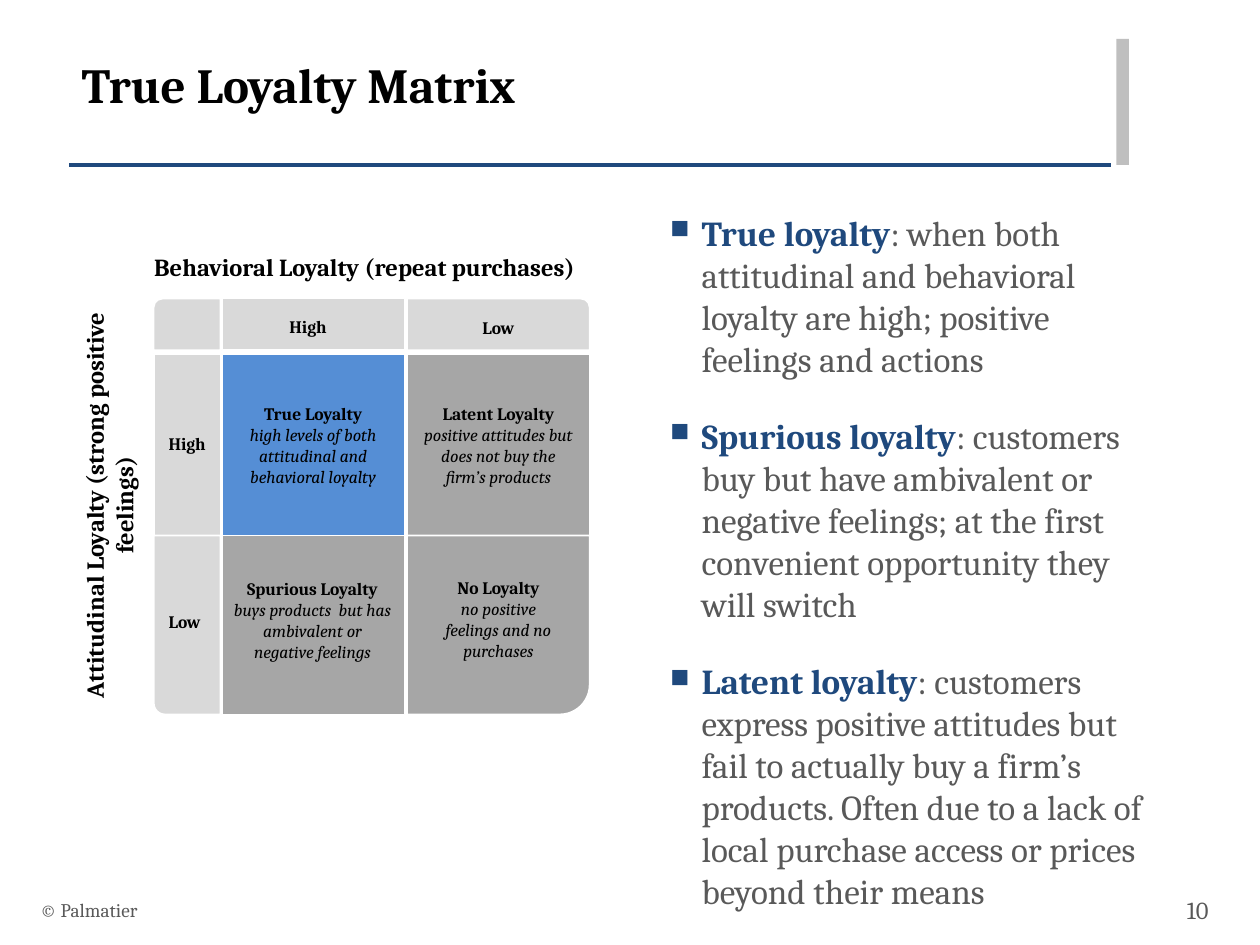
from lxml import etree
from pptx import Presentation
from pptx.dml.color import RGBColor
from pptx.enum.shapes import MSO_CONNECTOR, MSO_SHAPE
from pptx.enum.text import MSO_ANCHOR, PP_ALIGN
from pptx.oxml.ns import qn
from pptx.util import Inches, Pt

RECT, ROUND = MSO_SHAPE.RECTANGLE, MSO_SHAPE.ROUND_1_RECTANGLE
TOP, MIDDLE = MSO_ANCHOR.TOP, MSO_ANCHOR.MIDDLE
LEFT, CENTER, RIGHT = PP_ALIGN.LEFT, PP_ALIGN.CENTER, PP_ALIGN.RIGHT

FONT = "Cambria"
COLORS = {"navy": "1F497D", "blue": "558ED5", "gray": "A6A6A6", "light": "D9D9D9",
          "bar": "BFBFBF", "text": "595959", "black": "000000", "white": "FFFFFF"}

BULLETS = [
    ("True loyalty", ": when both attitudinal and behavioral loyalty are high; "
     "positive feelings and actions"),
    ("Spurious loyalty", ": customers buy but have ambivalent or negative feelings; "
     "at the first convenient opportunity they will switch"),
    ("Latent loyalty", ": customers express positive attitudes but fail to actually buy "
     "a firm’s products. Often due to a lack of local purchase access or prices "
     "beyond their means"),
]

COLS = [(1.22, 0.53), (1.76, 1.45), (3.23, 1.45)]
ROWS = [(2.37, 0.41), (2.81, 1.44), (4.25, 1.42)]
CELLS = [
    [("light", ROUND, 0, True), ("light", RECT, 0, False), ("light", ROUND, 0, False)],
    [("light", RECT, 0, False), ("blue", RECT, 0, False), ("gray", RECT, 0, False)],
    [("light", ROUND, 180, False), ("gray", RECT, 0, False), ("gray", ROUND, 180, True)],
]
QUADRANTS = [
    ((1.76, 2.81, 1.45, 1.44), "True Loyalty",
     "high levels of both attitudinal and behavioral loyalty"),
    ((3.23, 2.81, 1.45, 1.44), "Latent Loyalty",
     "positive attitudes but does not buy the firm’s products"),
    ((1.76, 4.55, 1.44, 0.76), "Spurious Loyalty",
     "buys products  but has ambivalent or negative feelings"),
    ((3.36, 4.54, 1.19, 0.76), "No Loyalty", "no positive feelings and no purchases"),
]
LEVELS = [((2.18, 2.41), "High"), ((3.69, 2.42), "Low"),
          ((1.22, 3.34), "High"), ((1.2, 4.75), "Low")]
LEVEL_SIZE = (0.53, 0.36)
AXES = [((1.05, 1.96, 3.69, 0.33), 0, "Behavioral Loyalty (repeat purchases)"),
        ((-1.01, 3.73, 3.76, 0.56), 270, "Attitudinal Loyalty (strong positive feelings)")]

HEAD = {"size": Pt(10), "bold": True}
DETAIL = {"size": Pt(10), "italic": True}


def inches(values):
    return [Inches(v) for v in values]


def rgb(name):
    return RGBColor.from_string(COLORS[name])


def add_block(s, at, fill, shape=RECT):
    sp = s.shapes.add_shape(shape, *inches(at))
    sp.shadow.inherit = False
    sp.fill.solid()
    sp.fill.fore_color.rgb = rgb(fill)
    sp.line.fill.background()
    return sp


def add_text(s, at, paragraphs, align=LEFT, anchor=TOP, inset=(0.1, 0.05)):
    sp = s.shapes.add_textbox(*inches(at))
    tf = sp.text_frame
    x, y = inches(inset)
    frame = {"word_wrap": True, "vertical_anchor": anchor, "margin_left": x,
             "margin_right": x, "margin_top": y, "margin_bottom": y}
    for name, value in frame.items():
        setattr(tf, name, value)
    for i, runs in enumerate(paragraphs):
        p = tf.add_paragraph() if i else tf.paragraphs[0]
        p.alignment = align
        for text, color, style in runs:
            r = p.add_run()
            r.text = text
            r.font.color.rgb = rgb(color)
            for name, value in {"name": FONT, **style}.items():
                setattr(r.font, name, value)
    return sp


def add_bullet(p):
    pPr = p._p.get_or_add_pPr()
    pPr.set("marL", str(Inches(0.25)))
    pPr.set("indent", str(-Inches(0.25)))
    color = etree.SubElement(pPr, qn("a:buClr"))
    etree.SubElement(color, qn("a:srgbClr"), val=COLORS["navy"])
    etree.SubElement(pPr, qn("a:buSzPct"), val="75000")
    etree.SubElement(pPr, qn("a:buChar"), char="■")


def add_frame(s):
    rule = s.shapes.add_connector(MSO_CONNECTOR.STRAIGHT, *inches((0.55, 1.31, 8.82, 1.31)))
    rule.line.color.rgb = rgb("navy")
    rule.line.width = Pt(2)
    etree.SubElement(rule._element.spPr, qn("a:effectLst"))
    add_block(s, (8.86, 0.31, 0.1, 1), "bar")
    add_text(s, (0.55, 0.38, 8.26, 0.88),
             [[("True Loyalty Matrix", "black", {"size": Pt(28), "bold": True})]])
    add_text(s, (0.22, 7.02, 6.7, 0.4),
             [[("© Palmatier", "text", {"size": Pt(11)})]], anchor=MIDDLE)
    add_text(s, (9.08, 7.02, 0.61, 0.4),
             [[("10", "text", {"size": Pt(14)})]], RIGHT, MIDDLE)


def add_definitions(s):
    paragraphs = [[(term, "navy", {"size": Pt(20), "bold": True}),
                   (meaning, "text", {"size": Pt(20)})] for term, meaning in BULLETS]
    sp = add_text(s, (5.22, 1.63, 3.97, 5.41), paragraphs)
    for i, p in enumerate(sp.text_frame.paragraphs):
        p.space_before = Pt(20 if i else 0)
        add_bullet(p)


def add_matrix(s):
    for (y, h), cells in zip(ROWS, CELLS):
        for (x, w), (fill, shape, turn, flip) in zip(COLS, cells):
            sp = add_block(s, (x, y, w, h), fill, shape)
            sp.line.color.rgb = rgb("white")
            sp.line.width = Pt(1)
            sp.rotation = turn
            if flip:
                sp._element.spPr.xfrm.set("flipH", "1")
    for at, name, detail in QUADRANTS:
        anchor, inset = (MIDDLE, (0.1, 0.05)) if at[1] < ROWS[2][0] else (TOP, (0.09, 0.04))
        add_text(s, at, [[(name, "black", HEAD)], [(detail, "black", DETAIL)]],
                 CENTER, anchor, inset)
    for at, level in LEVELS:
        sp = add_text(s, at + LEVEL_SIZE, [[(level, "black", HEAD)]], CENTER, MIDDLE)
        sp.text_frame.word_wrap = False
    for at, turn, label in AXES:
        sp = add_text(s, at, [[(label, "black", {"size": Pt(14), "bold": True})]],
                      CENTER, inset=(0.09, 0.04))
        sp.rotation = turn


def main():
    prs = Presentation()
    prs.slide_width, prs.slide_height = inches((10, 7.5))
    s = prs.slides.add_slide(prs.slide_layouts[6])
    add_frame(s)
    add_definitions(s)
    add_matrix(s)
    prs.save("out.pptx")


if __name__ == "__main__":
    main()
